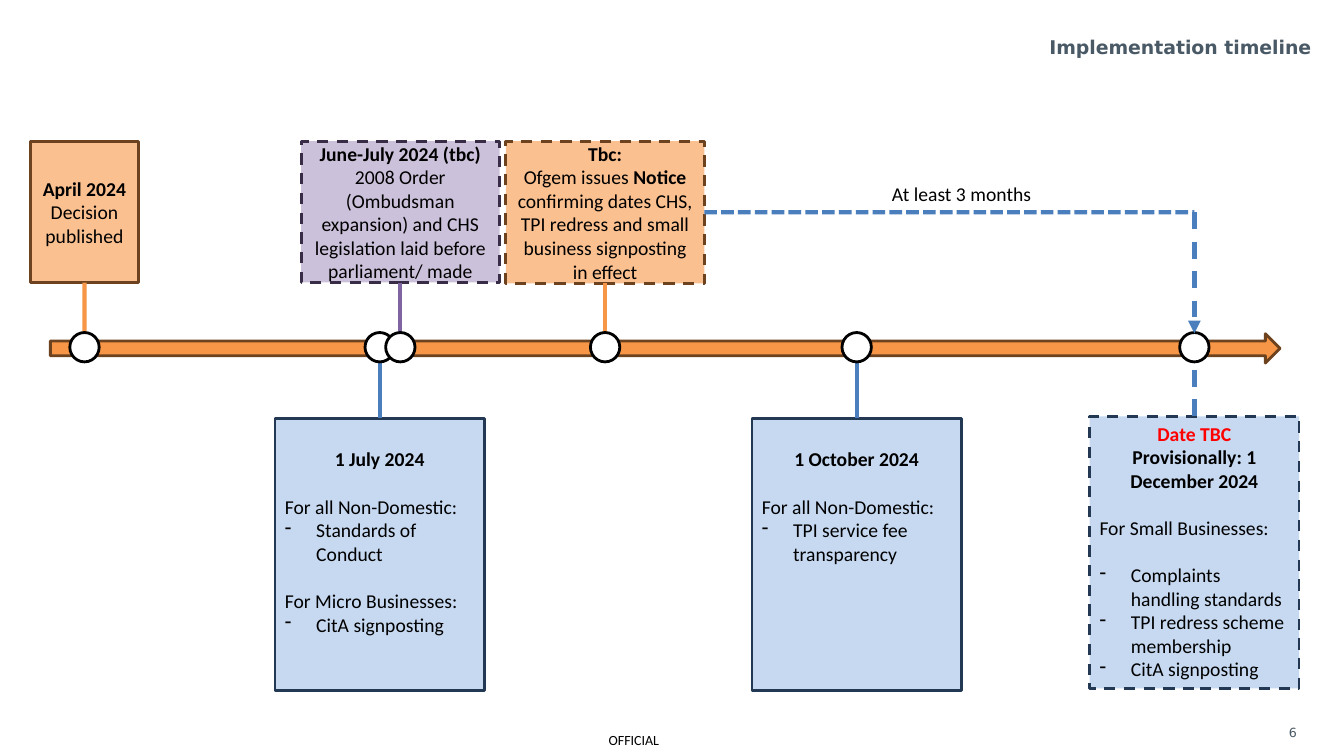
from lxml import etree
from pptx import Presentation
from pptx import util as u
from pptx.dml import color as dml
from pptx.enum import dml as lines, shapes, text
from pptx.oxml import ns

THEME = {
    "orange": "F79646", "brown": "6C421F", "peach": "FAC090",
    "lilac": "CCC1DA", "plum": "382C47", "purple": "8064A2",
    "sky": "C6D9F1", "navy": "233953", "blue": "4B7EBC",
    "slate": "495965", "ink": "000000", "alert": "FF0000", "paper": "FFFFFF",
    "body": "Calibri", "display": "DejaVu Sans",
    "title_size": 13.5, "body_size": 14, "marking_size": 10, "page_size": 9,
}
BASE = {"name": THEME["body"], "size": u.Pt(THEME["body_size"]), "bold": False}
SMALL = {**BASE, "size": u.Pt(THEME["marking_size"])}
TITLE = {"name": THEME["display"], "size": u.Pt(THEME["title_size"]), "bold": True}
PAGE = {**TITLE, "size": u.Pt(THEME["page_size"]), "bold": False}
BOLD = {**BASE, "bold": True}
LEFT = {"alignment": text.PP_ALIGN.LEFT}
CENTER = {"alignment": text.PP_ALIGN.CENTER}
GAP = {**LEFT, "space_before": u.Pt(17)}
STYLES = {
    "title": (TITLE, "slate", {"alignment": text.PP_ALIGN.RIGHT}),
    "page": (PAGE, "slate", LEFT),
    "marking": (SMALL, "ink", LEFT),
    "label": (BASE, "ink", LEFT),
    "date": (BOLD, "ink", CENTER),
    "alert": (BOLD, "alert", CENTER),
    "event": (BASE, "ink", CENTER),
    "group": (BASE, "ink", GAP),
    "item": (BASE, "ink", LEFT),
    "spaced item": (BASE, "ink", GAP),
}
DASH = lines.MSO_LINE.DASH


def write(frame, paragraphs):
    for index, (style, words) in enumerate(paragraphs):
        paragraph = frame.add_paragraph() if index else frame.paragraphs[0]
        font, ink, layout = STYLES[style]
        if style.endswith("item"):
            properties = paragraph._p.get_or_add_pPr()
            properties.set("marL", str(u.Cm(0.79)))
            properties.set("indent", str(-u.Cm(0.79)))
            etree.SubElement(properties, ns.qn("a:buChar"), char="-")
        for name, value in layout.items():
            setattr(paragraph, name, value)
        for part, piece in enumerate(words.split("*")):
            run = paragraph.add_run()
            run.text = piece
            for name, value in font.items():
                setattr(run.font, name, value)
            if part % 2:
                run.font.bold = True
            run.font.color.rgb = dml.RGBColor.from_string(THEME[ink])


def draw_line(start, end, ink, dash=None):
    line = slide.shapes.add_connector(
        shapes.MSO_CONNECTOR.STRAIGHT, *(u.Cm(v) for v in (*start, *end)))
    line.line.color.rgb = dml.RGBColor.from_string(THEME[ink])
    line.line.width = u.Pt(3)
    if dash:
        line.line.dash_style = dash
    etree.SubElement(line._element.spPr, ns.qn("a:effectLst"))
    return line


deck = Presentation()
deck.slide_width, deck.slide_height = u.Cm(33.87), u.Cm(19.05)
slide = deck.slides.add_slide(deck.slide_layouts[5])

title = slide.shapes.title
for name, value in {"left": 11.07, "top": 0.79, "width": 22.23, "height": 0.79}.items():
    setattr(title, name, u.Cm(value))
title.text_frame.vertical_anchor = text.MSO_ANCHOR.MIDDLE
title.text_frame.auto_size = text.MSO_AUTO_SIZE.NONE
write(title.text_frame, [("title", "Implementation timeline")])

for bounds, style, words, inset, wrap in [
    ((15.34, 18.44, 3.25, 0.43), "marking", "OFFICIAL", 0, True),
    ((32.23, 18.14, 1.4, 0.74), "page", "6", None, True),
    ((22.23, 4.45, 4.06, 0.86), "label", "At least 3 months", None, False),
]:
    caption = slide.shapes.add_textbox(*(u.Cm(v) for v in bounds)).text_frame
    caption.word_wrap = wrap
    if inset is not None:
        for side in ("left", "top", "right", "bottom"):
            setattr(caption, f"margin_{side}", inset)
    write(caption, [(style, words)])

AXIS_Y, DOT = 8.75, 0.74
axis = slide.shapes.add_shape(
    shapes.MSO_SHAPE.RIGHT_ARROW, u.Cm(1.27), u.Cm(8.41), u.Cm(30.99), u.Cm(DOT))
axis.shadow.inherit = False
axis.fill.solid()
axis.fill.fore_color.rgb = dml.RGBColor.from_string(THEME["orange"])
axis.line.color.rgb = dml.RGBColor.from_string(THEME["brown"])
axis.line.width = u.Pt(2)

MIDDLE, TOP = text.MSO_ANCHOR.MIDDLE, text.MSO_ANCHOR.TOP
ABOVE, BELOW = 3.56, 10.54
milestones = [
    (2.13, ABOVE, 2.74, 3.56, "peach", "brown", "orange", None, 0.13, [
        ("date", "April 2024"), ("event", "Decision published")]),
    (9.57, BELOW, 5.28, 6.86, "sky", "navy", "blue", None, 0.73, [
        ("date", "1 July 2024"), ("group", "For all Non-Domestic:"),
        ("item", "Standards of Conduct"), ("group", "For Micro Businesses:"),
        ("item", "CitA signposting")]),
    (10.09, ABOVE, 5, 3.56, "lilac", "plum", "purple", DASH, 0.13, [
        ("date", "June-July 2024 (tbc)"),
        ("event", "2008 Order (Ombudsman expansion) and CHS legislation "
                  "laid before parliament/ made")]),
    (15.25, ABOVE, 5, 3.58, "peach", "brown", "orange", DASH, 0.13, [
        ("date", "Tbc:"),
        ("event", "Ofgem issues *Notice* confirming dates CHS, TPI redress "
                  "and small business signposting in effect")]),
    (21.59, BELOW, 5.28, 6.86, "sky", "navy", "blue", None, 0.73, [
        ("date", "1 October 2024"), ("group", "For all Non-Domestic:"),
        ("item", "TPI service fee transparency")]),
    (30.1, BELOW - 0.05, 5.28, 6.86, "sky", "navy", "blue", DASH, 0.13, [
        ("alert", "Date TBC"), ("date", "Provisionally: 1 December 2024"),
        ("group", "For Small Businesses:"),
        ("spaced item", "Complaints handling standards"),
        ("item", "TPI redress scheme membership"), ("item", "CitA signposting")]),
]

cards = {}
for x, top, width, height, fill, edge, stem_ink, dash, inset, words in milestones:
    above = top < AXIS_Y
    card = slide.shapes.add_shape(
        shapes.MSO_SHAPE.RECTANGLE,
        *(u.Cm(v) for v in (x - width / 2, top, width, height)))
    cards[words[0][1]] = card
    card.text_frame.word_wrap = True
    card.text_frame.margin_top = u.Cm(inset)
    card.text_frame.vertical_anchor = MIDDLE if above else TOP
    write(card.text_frame, words)

    stem_end = AXIS_Y - DOT / 2 if above else AXIS_Y + DOT / 2
    stem = draw_line((x, top), (x, stem_end), stem_ink, None if above else dash)
    stem.begin_connect(card, 2 if above else 0)

    dot = slide.shapes.add_shape(
        shapes.MSO_SHAPE.OVAL,
        *(u.Cm(v) for v in (x - DOT / 2, AXIS_Y - DOT / 2, DOT, DOT)))
    for part, inside, outline in ((card, fill, edge), (dot, "paper", "ink")):
        part.shadow.inherit = False
        part.fill.solid()
        part.fill.fore_color.rgb = dml.RGBColor.from_string(THEME[inside])
        part.line.color.rgb = dml.RGBColor.from_string(THEME[outline])
        part.line.width = u.Pt(2)
    if dash:
        card.line.dash_style = dash

notice_y, december_x = 5.35, 30.1
notice_period = draw_line(
    (17.75, notice_y), (december_x, notice_y), "blue", lines.MSO_LINE.SQUARE_DOT)
notice_period.begin_connect(cards["Tbc:"], 3)
deadline = draw_line((december_x, notice_y), (december_x, 8.4), "blue", DASH)
etree.SubElement(deadline.line._get_or_add_ln(), ns.qn("a:tailEnd"), type="triangle")

deck.save("out.pptx")
